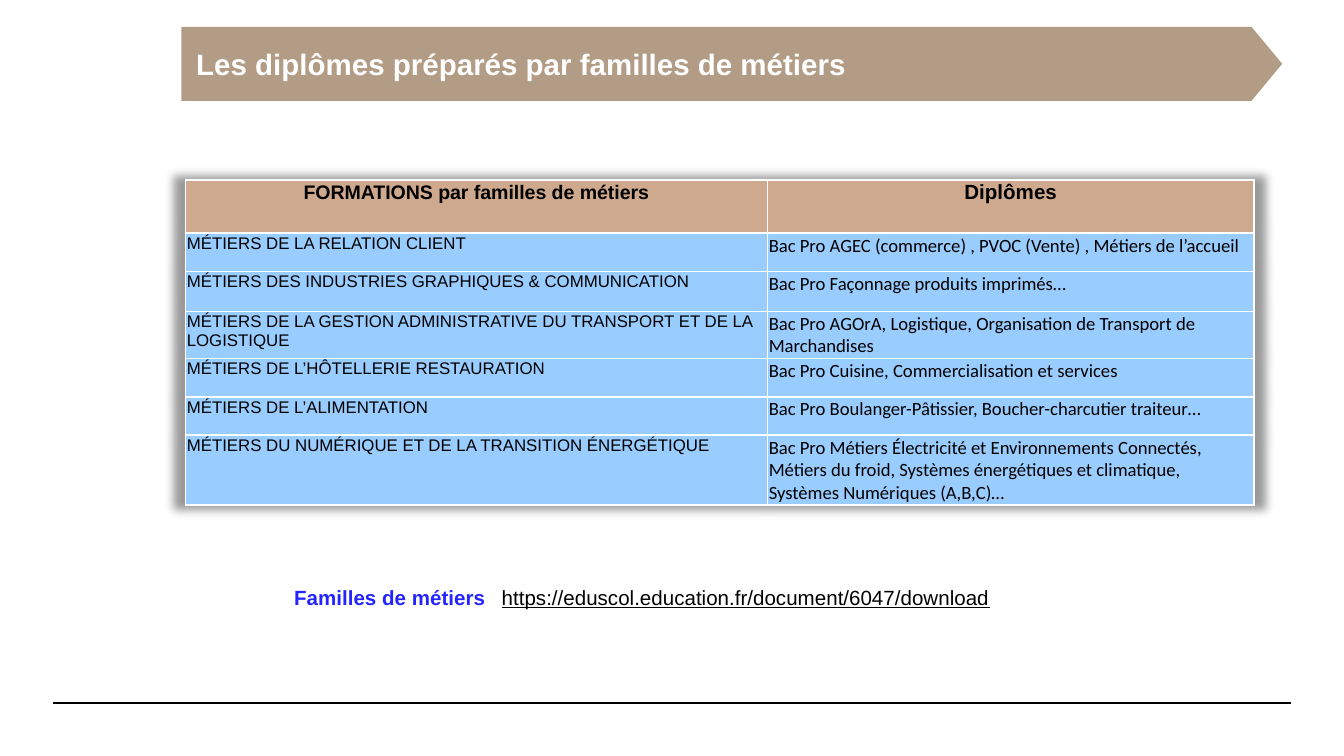
"""Build the slide listing the diplomas prepared in each family of trades."""
from dataclasses import dataclass

from lxml import etree
from pptx import Presentation
from pptx.dml.color import RGBColor
from pptx.enum.shapes import MSO_CONNECTOR, MSO_SHAPE
from pptx.enum.text import MSO_ANCHOR, MSO_AUTO_SIZE, PP_ALIGN
from pptx.oxml import parse_xml
from pptx.oxml.ns import nsdecls, qn
from pptx.util import Pt

STRAIGHT = MSO_CONNECTOR.STRAIGHT
PENTAGON = MSO_SHAPE.PENTAGON
MIDDLE, TOP = MSO_ANCHOR.MIDDLE, MSO_ANCHOR.TOP
NO_AUTOFIT = MSO_AUTO_SIZE.NONE
LEFT, CENTER, JUSTIFY = PP_ALIGN.LEFT, PP_ALIGN.CENTER, PP_ALIGN.JUSTIFY

COLORS = {
    "black": "000000",
    "white": "FFFFFF",
    "banner": "B29C85",
    "header": "CFA98D",
    "body": "99CCFF",
    "label": "2424FF",
}
TITLE_ONLY_LAYOUT = 5
BANNER_BOX = (Pt(97.2), Pt(14.4), Pt(589.7), Pt(39.6))
TABLE_BOX = (Pt(99.4), Pt(96.5), Pt(572.4), Pt(174.2))
COLUMN_WIDTHS = (311.8, 260.6)
CELL_INSET = Pt(0.7)
BORDER_TAGS = ("a:lnL", "a:lnR", "a:lnT", "a:lnB")


@dataclass(frozen=True)
class TradeFamily:
    """One table row: a family of trades, its diplomas and the row height."""

    family: str
    diplomas: str
    height: float


HEADING = TradeFamily("FORMATIONS par familles de métiers", "Diplômes", 28.4)
FAMILIES = (
    TradeFamily("MÉTIERS DE LA RELATION CLIENT",
                "Bac Pro AGEC (commerce) , PVOC (Vente) , Métiers de l’accueil", 20.6),
    TradeFamily("MÉTIERS DES INDUSTRIES GRAPHIQUES & COMMUNICATION",
                "Bac Pro Façonnage produits imprimés…", 21.4),
    TradeFamily("MÉTIERS DE LA GESTION ADMINISTRATIVE DU TRANSPORT ET DE LA LOGISTIQUE",
                "Bac Pro AGOrA, Logistique, Organisation de Transport de Marchandises", 25.2),
    TradeFamily("MÉTIERS DE L’HÔTELLERIE RESTAURATION",
                "Bac Pro Cuisine, Commercialisation et services", 20.6),
    TradeFamily("MÉTIERS DE L’ALIMENTATION",
                "Bac Pro Boulanger-Pâtissier, Boucher-charcutier traiteur…", 20.6),
    TradeFamily("MÉTIERS DU NUMÉRIQUE ET DE LA TRANSITION ÉNERGÉTIQUE",
                "Bac Pro Métiers Électricité et Environnements Connectés, Métiers du froid, "
                "Systèmes énergétiques et climatique, Systèmes Numériques (A,B,C)…", 37.4),
)


def rgb(color: str) -> RGBColor:
    """Return the named palette colour."""
    return RGBColor.from_string(COLORS[color])


def write(paragraph, text: str, *, size: float, font: str = "Arial", color: str = "black",
          bold: bool = False, underline: bool = False, align=LEFT) -> None:
    """Append one formatted run to a paragraph."""
    paragraph.alignment = align
    run = paragraph.add_run()
    run.text = text
    run.font.size = Pt(size)
    run.font.name = font
    run.font.bold = bold
    run.font.underline = underline
    run.font.color.rgb = rgb(color)


def draw_rule(slide) -> None:
    """Draw the line at the foot of the slide."""
    rule = slide.shapes.add_connector(STRAIGHT, Pt(28.4), Pt(376.6), Pt(691.6), Pt(376.6))
    rule.line.color.rgb = rgb("black")
    rule.line.width = Pt(0.8)
    etree.SubElement(rule.element.spPr, qn("a:effectLst"))


def draw_banner(slide) -> None:
    """Draw the arrow-shaped banner and set the title over it."""
    banner = slide.shapes.add_shape(PENTAGON, *BANNER_BOX)
    banner.adjustments[0] = 0.415
    banner.shadow.inherit = False
    banner.fill.solid()
    banner.fill.fore_color.rgb = rgb("banner")
    banner.line.fill.background()

    title = slide.shapes.title
    title.left, title.top, title.width, title.height = BANNER_BOX
    frame = title.text_frame
    frame.auto_size = NO_AUTOFIT
    frame.word_wrap = True
    frame.vertical_anchor = MIDDLE
    frame.margin_left = frame.margin_right = Pt(7.9)
    frame.margin_top = frame.margin_bottom = Pt(3.6)
    write(frame.paragraphs[0], "Les diplômes préparés par familles de métiers",
          size=15.8, color="white", bold=True, align=JUSTIFY)
    banner.element.addnext(title.element)


def fill_cell(cell, text: str, fill: str, **text_format) -> None:
    """Write a table cell and give it its fill, insets and white borders."""
    cell.margin_left = cell.margin_right = cell.margin_top = CELL_INSET
    cell.margin_bottom = 0
    cell.vertical_anchor = TOP
    write(cell.text_frame.paragraphs[0], text, **text_format)
    properties = cell._tc.get_or_add_tcPr()
    for tag in BORDER_TAGS:
        properties.append(parse_xml(
            f'<{tag} {nsdecls("a")} w="{Pt(1)}"><a:solidFill>'
            f'<a:srgbClr val="{COLORS["white"]}"/></a:solidFill></{tag}>'))
    cell.fill.solid()
    cell.fill.fore_color.rgb = rgb(fill)


def draw_table(slide) -> None:
    """Draw the table of trade families and diplomas with its soft shadow."""
    rows = (HEADING, *FAMILIES)
    table = slide.shapes.add_table(len(rows), len(COLUMN_WIDTHS), *TABLE_BOX).table
    table.first_row = table.horz_banding = False
    table._tbl.tblPr.insert(0, parse_xml(
        f'<a:effectLst {nsdecls("a")}><a:outerShdw blurRad="{Pt(5)}" sx="102000" '
        f'sy="102000" algn="ctr" rotWithShape="0"><a:srgbClr val="{COLORS["black"]}">'
        '<a:alpha val="40000"/></a:srgbClr></a:outerShdw></a:effectLst>'))
    for column, width in zip(table.columns, COLUMN_WIDTHS):
        column.width = Pt(width)
    for index, entry in enumerate(rows):
        table.rows[index].height = Pt(entry.height)
        family, diplomas = table.cell(index, 0), table.cell(index, 1)
        if entry is HEADING:
            fill_cell(family, entry.family, "header", size=10.5, bold=True, align=CENTER)
            fill_cell(diplomas, entry.diplomas, "header", size=11, bold=True, align=CENTER)
        else:
            fill_cell(family, entry.family, "body", size=9)
            fill_cell(diplomas, entry.diplomas, "body", size=10, font="Calibri")


def draw_reference(slide) -> None:
    """Write the label and the address of the reference document."""
    reference = slide.shapes.add_textbox(Pt(150.5), Pt(309.6), Pt(504.7), Pt(20.9))
    reference.text_frame.word_wrap = True
    paragraph = reference.text_frame.paragraphs[0]
    tabs = etree.SubElement(paragraph._p.get_or_add_pPr(), qn("a:tabLst"))
    etree.SubElement(tabs, qn("a:tab"), pos=str(Pt(111.2)), algn="l")
    write(paragraph, "Familles de métiers\t", size=11, color="label", bold=True)
    write(paragraph, "https://eduscol.education.fr/document/6047/download",
          size=11, underline=True)


def main() -> None:
    """Assemble and save the slide."""
    presentation = Presentation()
    presentation.slide_width, presentation.slide_height = Pt(720), Pt(405)
    slide = presentation.slides.add_slide(presentation.slide_layouts[TITLE_ONLY_LAYOUT])
    draw_rule(slide)
    draw_table(slide)
    draw_banner(slide)
    draw_reference(slide)
    presentation.save("out.pptx")


if __name__ == "__main__":
    main()
